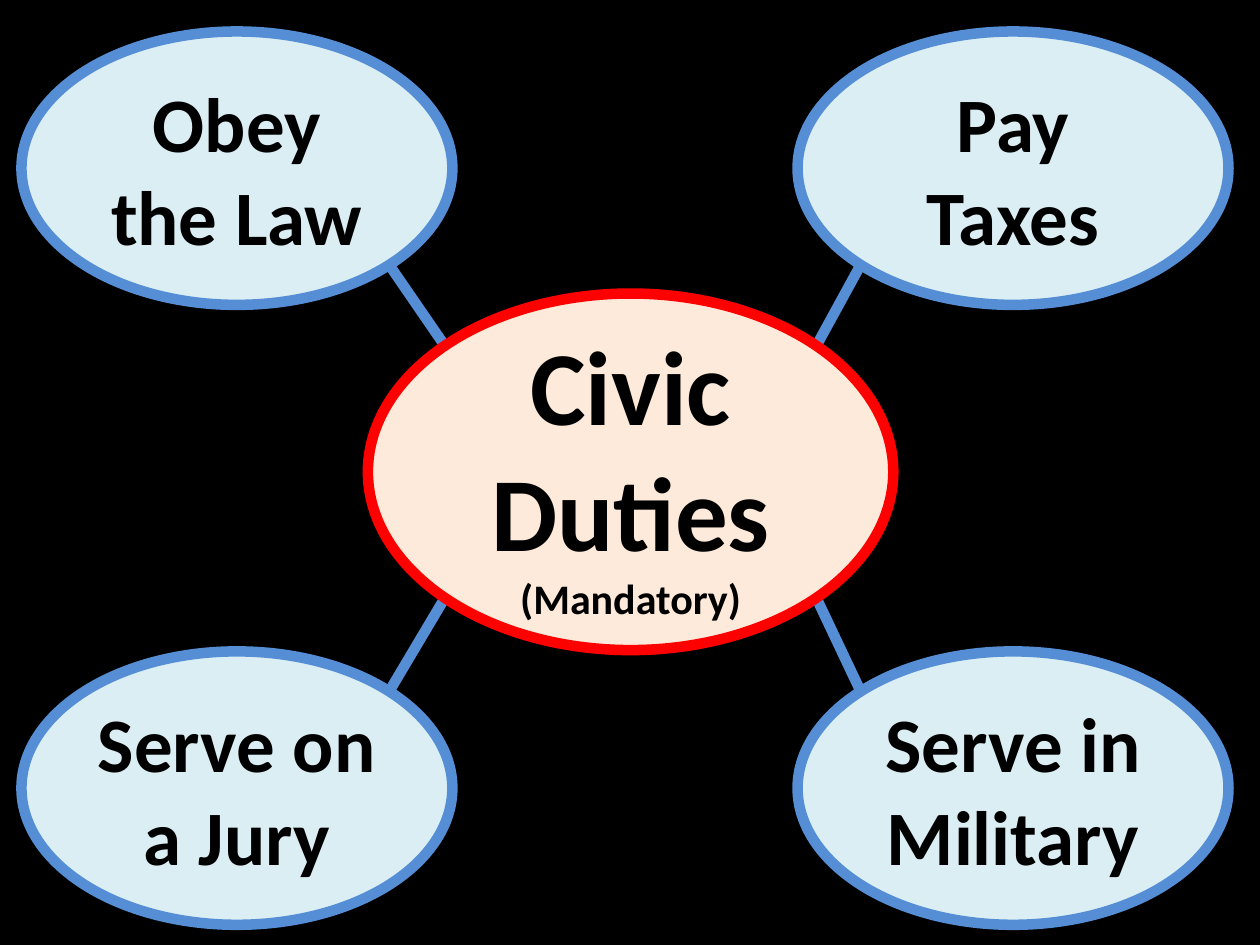
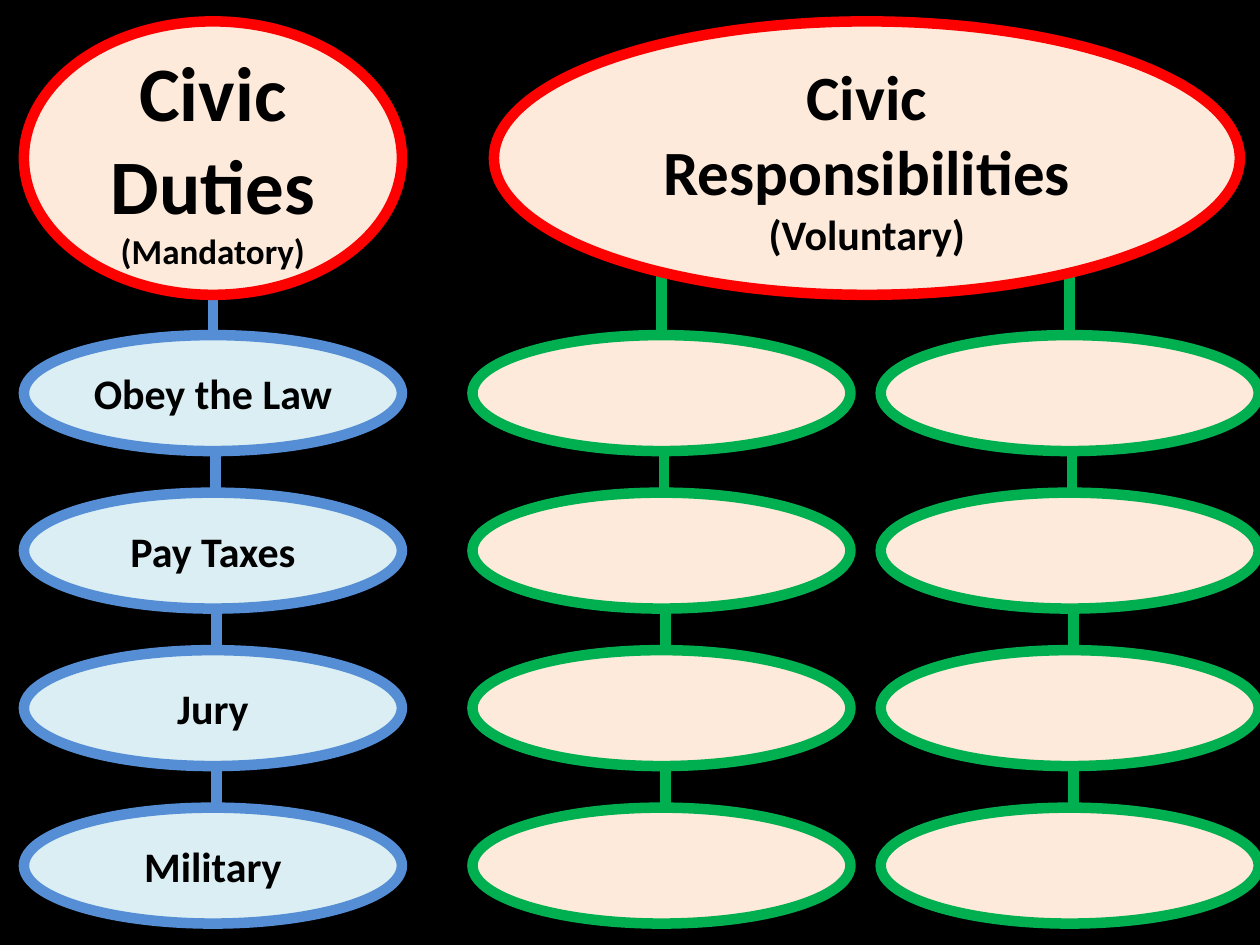
from math import sqrt

from pptx import Presentation
from pptx.dml.color import RGBColor as Rgb
from pptx.enum.shapes import MSO_CONNECTOR as Conn, MSO_SHAPE as Kind
from pptx.enum.text import MSO_ANCHOR as Anchor, PP_ALIGN as Align
from pptx.oxml.ns import qn
from pptx.util import Inches, Pt

HUES = {"back": "000000", "text": "000000", "ice": "DBEEF4", "blue": "558ED5",
        "peach": "FDEADA", "red": "FF0000", "green": "00B050"}
FONT = "Calibri"
EDGE = 6
DRIFT = (0, 0.02, 0.03, 0.03)


def hue(name):
    """Return a named colour."""
    return Rgb.from_string(HUES[name])


def write(frame, text, size=24, small=None, note=None):
    """Fill a frame with bold centred text and an optional small note."""
    frame.word_wrap = True
    frame.vertical_anchor = Anchor.MIDDLE
    rows = [(text, size)] + ([(note, small)] if note else [])
    for i, (line, high) in enumerate(rows):
        para = frame.paragraphs[0] if i == 0 else frame.add_paragraph()
        para.alignment = Align.CENTER
        run = para.add_run()
        run.text = line
        font = run.font
        font.name, font.size, font.bold = FONT, Pt(high), True
        font.color.rgb = hue("text")


def oval(slide, box, fill, line, text=None, **style):
    """Draw an outlined oval, with text if there is any."""
    shape = slide.shapes.add_shape(Kind.OVAL, *map(Inches, box))
    shape.shadow.inherit = False
    shape.fill.solid()
    shape.fill.fore_color.rgb = hue(fill)
    shape.line.color.rgb = hue(line)
    shape.line.width = Pt(EDGE)
    if text:
        write(shape.text_frame, text, **style)


def link(slide, start, end, line):
    """Draw a straight line between two points."""
    wire = slide.shapes.add_connector(Conn.STRAIGHT, *map(Inches, (*start, *end)))
    wire.line.color.rgb = hue(line)
    wire.line.width = Pt(EDGE)
    props = wire._element.spPr
    props.append(props.makeelement(qn("a:effectLst"), {}))


def rim(box, dx, dy):
    """Return the diagonal point of an oval towards dx, dy."""
    left, top, wide, high = box
    return (left + wide / 2 * (1 + dx / sqrt(2)),
            top + high / 2 * (1 + dy / sqrt(2)))


def web(slide, hub, duties):
    """Join a duty in each corner to the hub."""
    for text, dx, dy in duties:
        box = (0.17 if dx < 0 else 6.33, 0.25 if dy < 0 else 5.17, 3.42, 2.17)
        oval(slide, box, "ice", "blue", text, size=44)
        link(slide, rim(box, -dx, -dy), rim(hub, dx, dy), "blue")
    oval(slide, hub, "peach", "red", "Civic Duties",
         size=60, note="(Mandatory)", small=24)


def chain(slide, box, start, fill, line, items):
    """Hang a column of linked ovals below a start height."""
    left, top, wide, high = box
    pitch = 1.25
    for i, (text, shift) in enumerate(zip(items, DRIFT)):
        y = top + i * pitch
        oval(slide, (left, y, wide, high), fill, line, text)
        x = left + wide / 2 + shift
        link(slide, (x, y - pitch + high if i else start), (x, y), line)


def chart(slide):
    """Draw the duty column and the two blank columns with their heads."""
    chain(slide, (0.19, 2.66, 3, 0.92), 2.33, "ice", "blue",
          ["Obey the Law", "Pay Taxes", "Jury", "Military"])
    oval(slide, (0.19, 0.17, 3, 2.17), "peach", "red", "Civic Duties",
         size=44, note="(Mandatory)", small=20)
    for left in (6.99, 3.75):
        chain(slide, (left, 2.66, 3, 0.92), 2.17, "peach", "green", [None] * 4)
    oval(slide, (3.92, 0.17, 5.92, 2.17), "peach", "red", "Civic Responsibilities",
         size=36, note="(Voluntary)", small=24)


def main():
    """Build and save the slides."""
    deck = Presentation()
    deck.slide_width, deck.slide_height = Inches(10), Inches(7.5)
    back = deck.slide_master.background.fill
    back.solid()
    back.fore_color.rgb = hue("back")
    blank = deck.slide_layouts[6]
    web(deck.slides.add_slide(blank), (2.92, 2.33, 4.17, 2.83),
        [("Obey the Law", -1, -1), ("Serve on a Jury", -1, 1),
         ("Pay Taxes", 1, -1), ("Serve in Military", 1, 1)])
    chart(deck.slides.add_slide(blank))
    deck.save("out.pptx")


if __name__ == "__main__":
    main()
